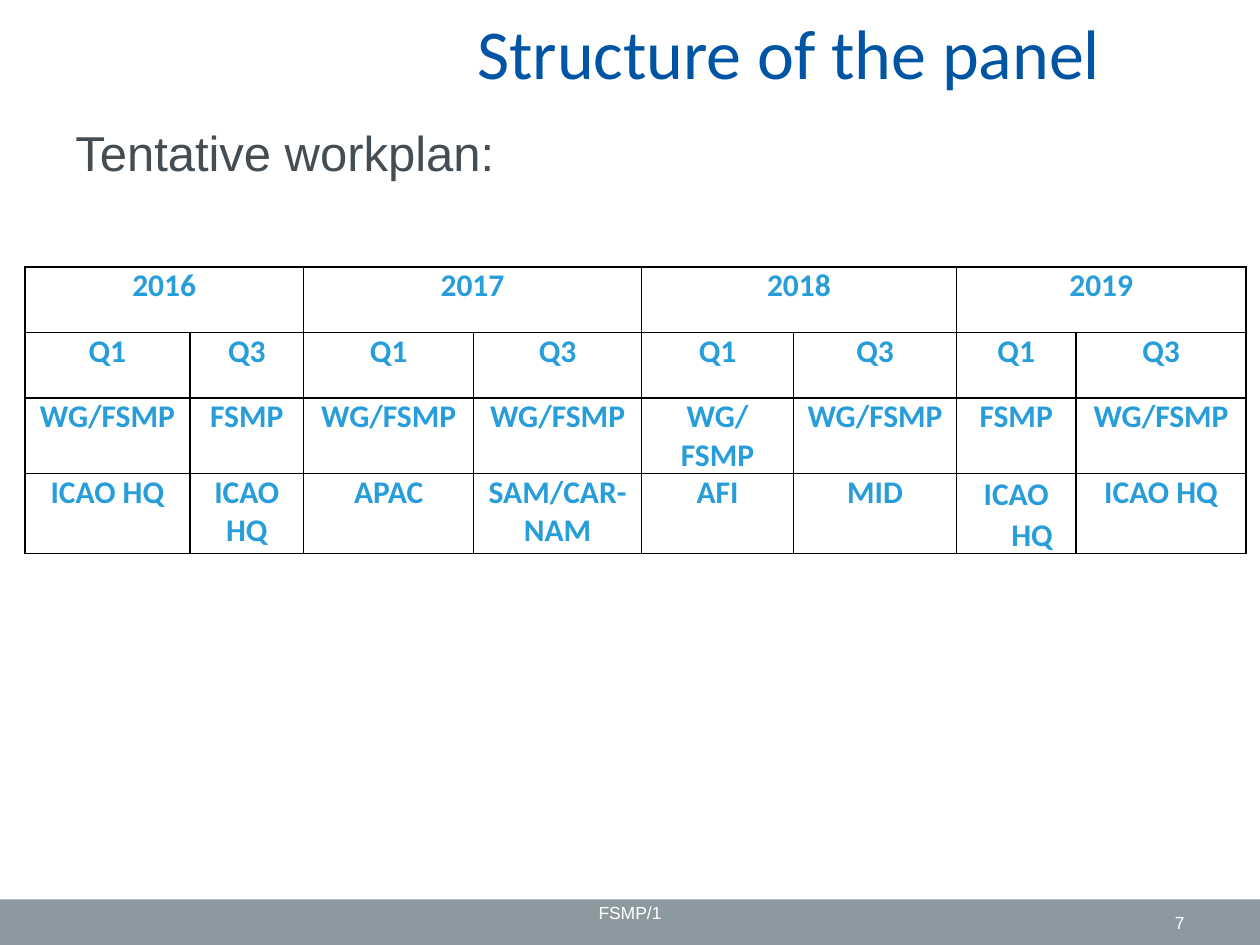
from lxml import etree
from pptx import Presentation
from pptx import util as u
from pptx.dml.color import RGBColor
from pptx.enum import shapes, text
from pptx.oxml import parse_xml
from pptx.oxml.ns import nsdecls, qn

COLORS = {
    "title": "0054A4",
    "body": "444D53",
    "bar": "8C99A1",
    "footer": "FFFFFF",
    "cell": "279DD9",
    "border": "000000",
}
TITLE = {"name": "Calibri", "size": u.Pt(40), "bold": False}
BODY = {"name": "Arial", "size": u.Pt(28)}
FOOTER = {"name": "Arial", "size": u.Pt(10)}
CELL = {"name": "Calibri", "size": u.Pt(18), "bold": True}

ALIGN, ANCHOR = text.PP_ALIGN, text.MSO_ANCHOR


class SlideBuilder:
    def __init__(self, prs):
        self.s = prs.slides.add_slide(prs.slide_layouts[5])

    def place(self, sp, box):
        for key, value in zip(("left", "top", "width", "height"), box):
            setattr(sp, key, u.Cm(value))

    def add_text(self, tf, words, fmt, color, align=ALIGN.LEFT):
        p = tf.paragraphs[0]
        p.alignment = align
        r = p.add_run()
        r.text = words
        for key, value in fmt.items():
            setattr(r.font, key, value)
        r.font.color.rgb = RGBColor.from_string(COLORS[color])

    def title(self, box, words):
        sp = self.s.shapes.title
        self.place(sp, box)
        sp.text_frame.vertical_anchor = ANCHOR.MIDDLE
        self.add_text(sp.text_frame, words, TITLE, "title", ALIGN.CENTER)

    def bar(self, box):
        sp = self.s.shapes.add_shape(shapes.MSO_SHAPE.RECTANGLE, *map(u.Cm, box))
        sp.shadow.inherit = False
        sp.fill.solid()
        sp.fill.fore_color.rgb = RGBColor.from_string(COLORS["bar"])
        sp.line.fill.background()

    def label(self, box, words, fmt, color, align=ALIGN.LEFT, **frame):
        tf = self.s.shapes.add_textbox(*map(u.Cm, box)).text_frame
        tf.word_wrap = True
        for key, value in frame.items():
            setattr(tf, key, value)
        self.add_text(tf, words, fmt, color, align)

    def borders(self, cell):
        tc_pr = cell._tc.get_or_add_tcPr()
        for side in ("lnL", "lnR", "lnT", "lnB"):
            tc_pr.append(parse_xml(
                f'<a:{side} {nsdecls("a")} w="12700"><a:solidFill>'
                f'<a:srgbClr val="{COLORS["border"]}"/></a:solidFill></a:{side}>'))

    def table(self, box, widths, heights, rows, merged):
        frame = self.s.shapes.add_table(len(rows), len(widths), *map(u.Cm, box))
        tbl = frame.table
        tbl.first_row = tbl.horz_banding = False
        for col, width in zip(tbl.columns, widths):
            col.width = u.Cm(width)
        for row, height in zip(tbl.rows, heights):
            row.height = u.Cm(height)
        for first, last in merged:
            tbl.cell(*first).merge(tbl.cell(*last))
        for i, row in enumerate(rows):
            for j, words in enumerate(row):
                cell = tbl.cell(i, j)
                cell.margin_left = cell.margin_right = u.Cm(0.18)
                cell.margin_top = cell.margin_bottom = 0
                self.borders(cell)
                cell.fill.background()
                if words:
                    self.add_text(cell.text_frame, words, CELL, "cell", ALIGN.CENTER)
        return tbl

    def hang(self, p, indent, spacing):
        p.line_spacing = spacing
        p_pr = p._p.get_or_add_pPr()
        p_pr.set("marL", str(u.Cm(indent)))
        p_pr.set("indent", str(-u.Cm(indent)))
        tabs = etree.SubElement(p_pr, qn("a:tabLst"))
        for n in (1, 2):
            etree.SubElement(tabs, qn("a:tab"), pos=str(u.Cm(n * indent)), algn="l")


def main():
    prs = Presentation()
    prs.slide_width, prs.slide_height = u.Cm(25.4), u.Cm(19.05)
    b = SlideBuilder(prs)

    # Heading and lead line
    b.title((6.5, 0.08, 18.8, 1.9), "Structure of the panel")
    b.label((1.27, 2.34, 22.86, 14.68), "Tentative workplan:", BODY, "body")

    # Footer band with meeting name and page number
    b.bar((0, 18.13, 25.4, 0.92))
    b.label((8.68, 18.13, 8.04, 0.92), "FSMP/1", FOOTER, "footer", ALIGN.CENTER,
            margin_top=u.Cm(0.05))
    b.label((18.2, 18.13, 5.93, 0.92), "7", FOOTER, "footer", ALIGN.RIGHT,
            vertical_anchor=ANCHOR.MIDDLE)

    # Workplan: two quarters per year, then meeting and venue
    years = ["2016", "2017", "2018", "2019"]
    wg, panel, hq = "WG/FSMP", "FSMP", "ICAO HQ"
    rows = [
        [words for year in years for words in (year, "")],
        ["Q1", "Q3"] * len(years),
        [wg, panel, wg, wg, wg, wg, panel, wg],
        [hq, hq, "APAC", "SAM/CAR-NAM", "AFI", "MID", hq, hq],
    ]
    widths = [3.33, 2.29, 3.43, 3.38, 3.07, 3.28, 2.41, 3.43]
    merged = [((0, 2 * n), (0, 2 * n + 1)) for n in range(len(years))]
    tbl = b.table((0.5, 5.38, 24.62, 5.36), widths, [1.32, 1.32, 1.32, 1.4],
                  rows, merged)
    b.hang(tbl.cell(3, 6).text_frame.paragraphs[0], 0.64, 1.06)

    prs.save("out.pptx")


if __name__ == "__main__":
    main()
